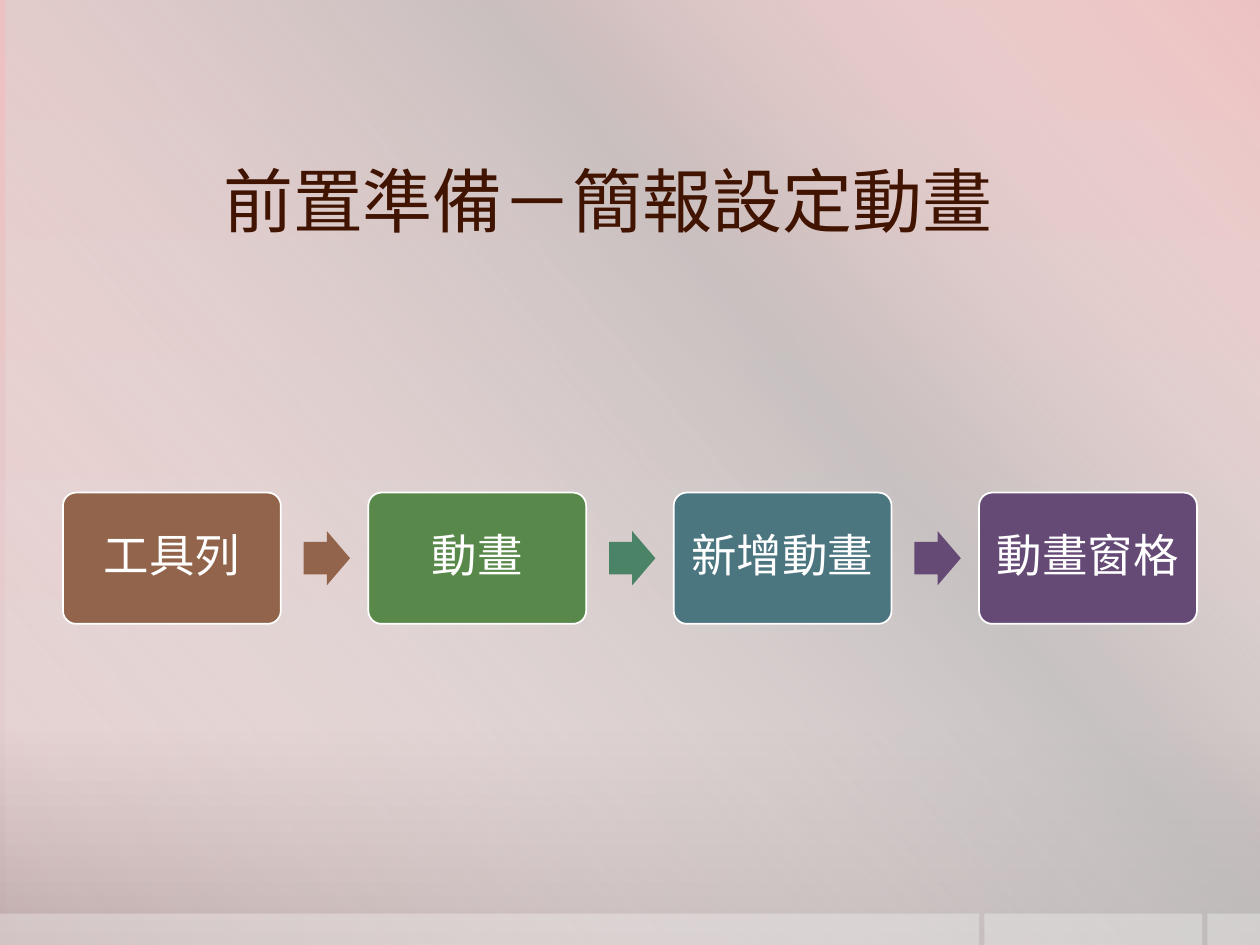
from lxml import etree
from pptx import Presentation
from pptx.dml.color import RGBColor
from pptx.enum.shapes import MSO_SHAPE as SHAPE
from pptx.enum.text import MSO_ANCHOR as ANCHOR, MSO_AUTO_SIZE as AUTOSIZE, PP_ALIGN as ALIGN
from pptx.oxml.ns import qn
from pptx.util import Pt


def add_box(kind, x, y, w, h, color):
    sp = s.shapes.add_shape(kind, Pt(x), Pt(y), Pt(w), Pt(h))
    sp.shadow.inherit = False
    sp.fill.solid()
    sp.fill.fore_color.rgb = RGBColor.from_string(color)
    sp.line.fill.background()
    return sp


def set_gradient(fill, element, angle, stops):
    """Fill with (position, colour, opacity) stops, all in percent; angle is clockwise."""
    fill.gradient()
    grad = element.find(".//" + qn("a:gradFill"))
    grad.find(qn("a:lin")).set("ang", str(angle * 60000))
    gs_list = grad.find(qn("a:gsLst"))
    for old in list(gs_list):
        gs_list.remove(old)
    for pos, color, opacity in stops:
        gs = etree.SubElement(gs_list, qn("a:gs"), pos=str(pos * 1000))
        clr = etree.SubElement(gs, qn("a:srgbClr"), val=color)
        if opacity < 100:
            etree.SubElement(clr, qn("a:alpha"), val=str(opacity * 1000))


prs = Presentation()
prs.slide_width, prs.slide_height = Pt(720), Pt(540)
s = prs.slides.add_slide(prs.slide_layouts[5])

# Background: pink gradient, diagonal grey sheen, translucent footer tiles
set_gradient(s.background.fill, s.element, 90,
             [(0, "EDC1C1", 100), (76, "E3CDCD", 100), (100, "BFABAB", 100)])
sheen = add_box(SHAPE.RECTANGLE, 3, 0, 720, 540, "FFFFFF")
set_gradient(sheen.fill, sheen.element, 140,
             [(0, "FFFFFF", 0), (34, "BFBFBF", 61), (38, "BFBFBF", 76), (100, "FFFFFF", 0)])
for x, w in [(0, 559.5), (562.5, 124.5), (690, 30)]:
    tile = add_box(SHAPE.RECTANGLE, x, 522, w, 18, "FFFFFF")
    clr = tile.element.spPr.find(".//" + qn("a:srgbClr"))
    etree.SubElement(clr, qn("a:alpha"), val="30000")

# Title, brought in front of the sheen
title = s.shapes.title
title.element.getparent().append(title.element)
title.left, title.top, title.width, title.height = Pt(127.5), Pt(78), Pt(556.5), Pt(72)
tf = title.text_frame
tf.text = "前置準備－簡報設定動畫"
tf.auto_size = AUTOSIZE.NONE
tf.vertical_anchor = ANCHOR.MIDDLE
tf.margin_left = tf.margin_right = 0
p = tf.paragraphs[0]
p.alignment = ALIGN.LEFT
p.font.size = Pt(40)
p.font.name = "Noto Sans CJK SC"
p.font.color.rgb = RGBColor.from_string("411401")
for props in p._p.iter(qn("a:defRPr")):
    etree.SubElement(props, qn("a:ea"), typeface="Noto Sans CJK SC")

# Process: four steps with an arrow after each but the last
steps = [
    ("工具列", "91644B", "91644B"),
    ("動畫", "59884B", "4B8366"),
    ("新增動畫", "4B757F", "654A76"),
    ("動畫窗格", "654A76", None),
]
LEFT, PITCH = 36, 174.5
for i, (label, color, arrow_color) in enumerate(steps):
    x = LEFT + i * PITCH
    step = add_box(SHAPE.ROUNDED_RECTANGLE, x, 281.5, 124.5, 75, color)
    step.adjustments[0] = 0.1
    step.line.color.rgb = RGBColor.from_string("FFFFFF")
    step.line.width = Pt(1)
    tf = step.text_frame
    tf.text = label
    tf.word_wrap = True
    tf.vertical_anchor = ANCHOR.MIDDLE
    tf.margin_left = tf.margin_right = tf.margin_top = tf.margin_bottom = Pt(7)
    p = tf.paragraphs[0]
    p.alignment = ALIGN.CENTER
    p.line_spacing = 0.9
    p.font.size = Pt(26)
    p.font.name = "Calibri"
    p.font.color.rgb = RGBColor.from_string("FFFFFF")
    if arrow_color:
        arrow = add_box(SHAPE.RIGHT_ARROW, x + 137.5, 303.5, 26.5, 31, arrow_color)
        arrow.adjustments[0] = 0.6

prs.save("out.pptx")
